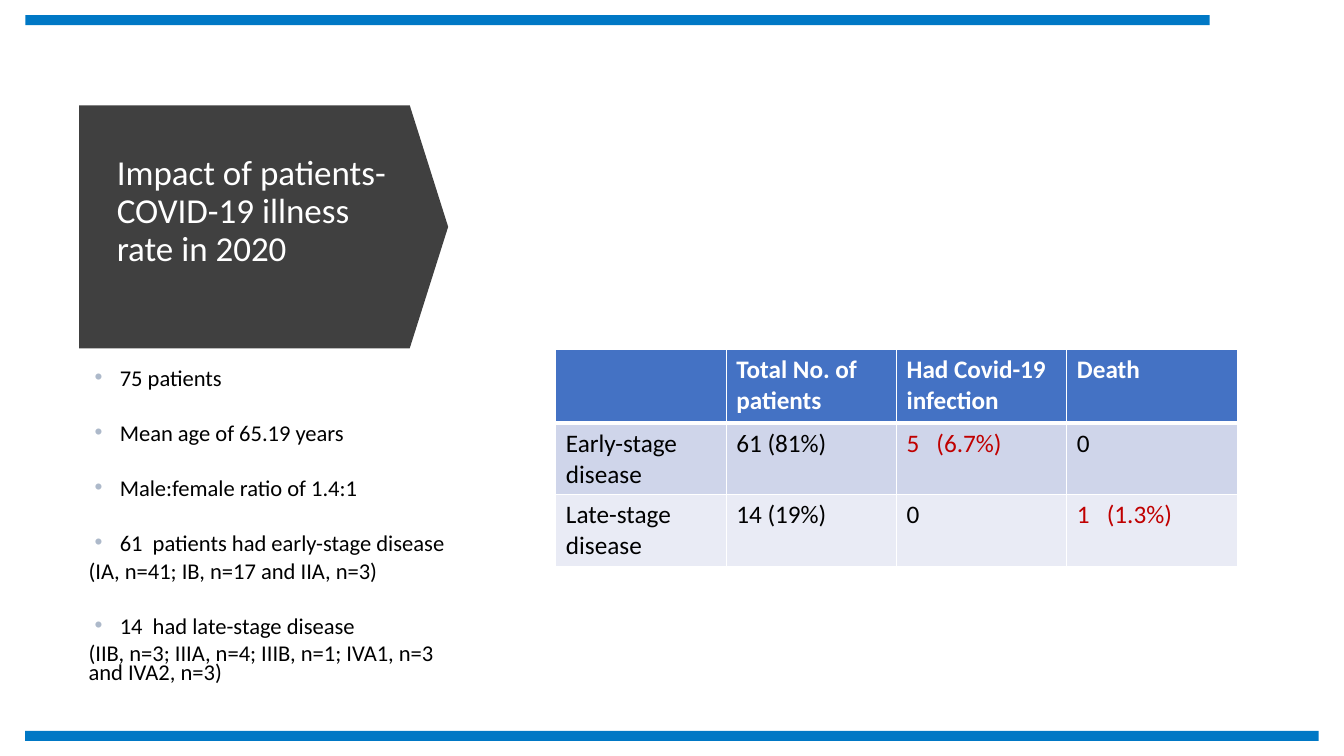
from dataclasses import dataclass
from typing import Any

from lxml.etree import SubElement
from pptx import Presentation
from pptx.dml.color import RGBColor
from pptx.enum.shapes import MSO_SHAPE
from pptx.enum.text import MSO_ANCHOR
from pptx.oxml.ns import qn
from pptx.util import Emu, Inches, Pt

COLOURS = {
    "bar": "0078C5",
    "banner": "404040",
    "white": "FFFFFF",
    "black": "000000",
    "bullet": "ADB9CA",
    "header": "4472C4",
    "odd_row": "CFD5EA",
    "even_row": "E9EBF5",
    "covid": "C00000",
}
FONT = "Calibri"
SLIDE_WIDTH = Inches(13.33)
SLIDE_HEIGHT = Inches(7.5)


@dataclass(frozen=True)
class Area:
    """Percentages of the slide's width and height."""

    left: float
    top: float
    width: float
    height: float

    def box(self) -> tuple[Emu, Emu, Emu, Emu]:
        return (across(self.left), down(self.top),
                across(self.width), down(self.height))


@dataclass(frozen=True)
class Finding:
    text: str
    detail: str = ""


BARS = [Area(1.88, 2, 88.13, 1.33), Area(1.88, 96.67, 96.23, 1.33)]
BANNER = Area(10.58, 5.6, 18.08, 48.8)
TITLE = Area(7.95, 17.6, 21.9, 26)
FINDINGS_AREA = Area(5.85, 48.53, 28.8, 47.6)
OUTCOMES_AREA = Area(41.36, 46.25, 50.7, 28.67)
ROW_SHARES = [9.73, 9.47, 9.47]

FINDINGS = [
    Finding("75 patients"),
    Finding("Mean age of 65.19 years"),
    Finding("Male:female ratio of 1.4:1"),
    Finding("61  patients had early-stage disease",
            "(IA, n=41; IB, n=17 and IIA, n=3)"),
    Finding("14  had late-stage disease",
            "(IIB, n=3; IIIA, n=4; IIIB, n=1; IVA1, n=3 and IVA2, n=3)"),
]
OUTCOMES = [
    ["", "Total No. of patients", "Had Covid-19 infection", "Death"],
    ["Early-stage disease", "61 (81%)", "5   (6.7%)", "0"],
    ["Late-stage disease", "14 (19%)", "0", "1   (1.3%)"],
]
HIGHLIGHTS = {(1, 2), (2, 3)}
ROW_FILLS = ["header", "odd_row", "even_row"]


def across(percent: float) -> Emu:
    return Emu(round(SLIDE_WIDTH * percent / 100))


def down(percent: float) -> Emu:
    return Emu(round(SLIDE_HEIGHT * percent / 100))


def colour(name: str) -> RGBColor:
    return RGBColor.from_string(COLOURS[name])


def style(paragraph: Any, size: float, ink: str, bold: bool = False) -> None:
    for run in paragraph.runs:
        run.font.name = FONT
        run.font.size = Pt(size)
        run.font.bold = bold
        run.font.color.rgb = colour(ink)


def add_block(slide: Any, kind: MSO_SHAPE, area: Area, fill: str) -> Any:
    block = slide.shapes.add_shape(kind, *area.box())
    block.shadow.inherit = False
    block.fill.solid()
    block.fill.fore_color.rgb = colour(fill)
    block.line.fill.background()
    return block


def add_banner(slide: Any) -> None:
    banner = add_block(slide, MSO_SHAPE.DOWN_ARROW, BANNER, "banner")
    banner.adjustments[0] = 1
    banner.adjustments[1] = 0.158
    banner.rotation = 270


def add_title(slide: Any) -> None:
    title = slide.shapes.add_textbox(*TITLE.box()).text_frame
    title.word_wrap = True
    title.vertical_anchor = MSO_ANCHOR.MIDDLE
    title.margin_bottom = Inches(0.43)
    heading = title.paragraphs[0]
    heading.text = "Impact of patients-\vCOVID-19 illness rate in 2020"
    heading.line_spacing = 0.9
    style(heading, 25, "white")


def add_bullet(paragraph: Any) -> None:
    properties = paragraph._p.get_or_add_pPr()
    properties.set("marL", str(Inches(0.31)))
    properties.set("indent", str(Inches(-0.25)))
    tint = SubElement(properties, qn("a:buClr"))
    SubElement(tint, qn("a:srgbClr"), val=COLOURS["bullet"])
    SubElement(properties, qn("a:buFont"), typeface="Arial")
    SubElement(properties, qn("a:buChar"), char="•")


def add_findings(slide: Any) -> None:
    frame = slide.shapes.add_textbox(*FINDINGS_AREA.box()).text_frame
    frame.word_wrap = True
    for index, finding in enumerate(FINDINGS):
        statement = frame.add_paragraph() if index else frame.paragraphs[0]
        statement.text = finding.text
        add_bullet(statement)
        if index:
            statement.space_before = Pt(19.75)
        lines = [statement]
        if finding.detail:
            detail = frame.add_paragraph()
            detail.text = finding.detail
            lines.append(detail)
        for line in lines:
            line.line_spacing = 0.7
            line.space_after = Pt(6)
            style(line, 16.1, "black")


def add_borders(cell: Any, bottom: float) -> None:
    properties = cell._tc.get_or_add_tcPr()
    for side, width in zip("LRTB", (1, 1, 1, bottom)):
        edge = SubElement(properties, qn(f"a:ln{side}"), w=str(Pt(width)))
        paint = SubElement(edge, qn("a:solidFill"))
        SubElement(paint, qn("a:srgbClr"), val=COLOURS["white"])


def add_outcomes(slide: Any) -> None:
    outcomes = slide.shapes.add_table(
        len(OUTCOMES), len(OUTCOMES[0]), *OUTCOMES_AREA.box()).table
    for column in outcomes.columns:
        column.width = across(OUTCOMES_AREA.width / len(OUTCOMES[0]))
    for row, share in zip(outcomes.rows, ROW_SHARES):
        row.height = down(share)
    for r, values in enumerate(OUTCOMES):
        is_header = r == 0
        for c, value in enumerate(values):
            cell = outcomes.cell(r, c)
            add_borders(cell, 3 if is_header else 1)
            cell.fill.solid()
            cell.fill.fore_color.rgb = colour(ROW_FILLS[r])
            cell.text_frame.text = value
            ink = "white" if is_header else "black"
            if (r, c) in HIGHLIGHTS:
                ink = "covid"
            style(cell.text_frame.paragraphs[0], 18, ink, is_header)


def main() -> None:
    deck = Presentation()
    deck.slide_width = SLIDE_WIDTH
    deck.slide_height = SLIDE_HEIGHT
    slide = deck.slides.add_slide(deck.slide_layouts[6])
    for bar in BARS:
        add_block(slide, MSO_SHAPE.RECTANGLE, bar, "bar")
    add_banner(slide)
    add_title(slide)
    add_findings(slide)
    add_outcomes(slide)
    deck.save("out.pptx")


if __name__ == "__main__":
    main()
